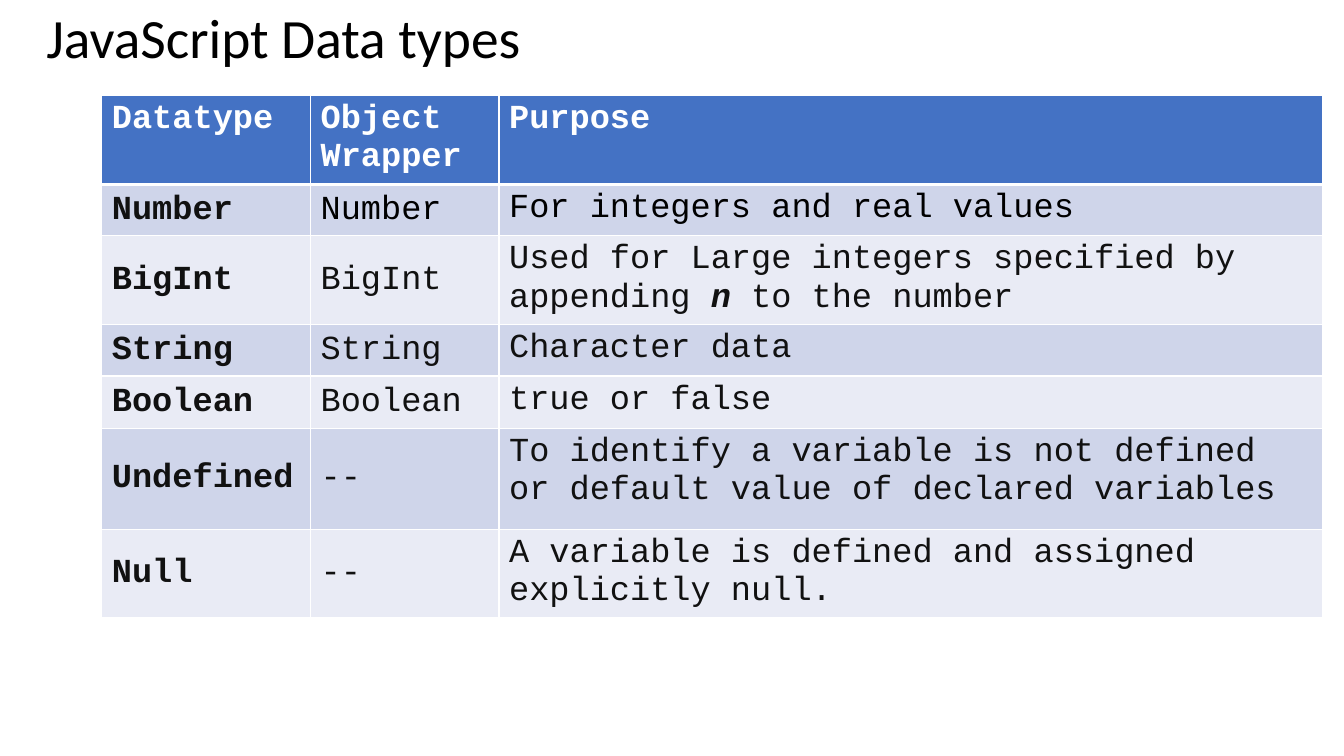
from lxml.etree import SubElement
from pptx import Presentation
from pptx.dml.color import RGBColor
from pptx.enum.text import MSO_ANCHOR, MSO_AUTO_SIZE, PP_ALIGN
from pptx.oxml.ns import qn
from pptx.util import Inches, Pt

HEADINGS = ["Datatype", "Object Wrapper", "Purpose"]
DATATYPES = [
    ("Number", "Number", ["For integers and real values"]),
    ("BigInt", "BigInt", ["Used for Large integers specified by appending ", "n", " to the number"]),
    ("String", "String", ["Character data"]),
    ("Boolean", "Boolean", ["true or false"]),
    ("Undefined", "--", ["To identify a variable is not defined or default value of declared variables"]),
    ("Null", "--", ["A variable is defined and assigned explicitly null."]),
]
COLUMN_WIDTHS = [2.07, 1.87, 8.17]
ROW_HEIGHTS = [0.88, 0.51, 0.88, 0.51, 0.52, 1, 0.88]
BANDS = ["CFD5EA", "E9EBF5"]
WHITE, BLACK, INK, BLUE = "FFFFFF", "000000", "111111", "4472C4"
CODE_FONT = {"name": "Courier New", "size": Pt(24), "bold": False}


def color(hex_value):
    """Return the colour for a hex string."""
    return RGBColor.from_string(hex_value)


def apply_format(target, values):
    """Set each named attribute on the target."""
    for attribute, value in values.items():
        setattr(target, attribute, value)


def write_run(paragraph, words, hex_value, font_format):
    """Append formatted words to a paragraph."""
    run = paragraph.add_run()
    run.text = words
    apply_format(run.font, font_format)
    run.font.color.rgb = color(hex_value)


def draw_borders(cell, widths):
    """Give a cell white borders, with widths in points by side."""
    properties = cell._tc.get_or_add_tcPr()
    for side, width in widths.items():
        border = SubElement(properties, qn(f"a:ln{side}"), w=str(Pt(width)))
        border_fill = SubElement(border, qn("a:solidFill"))
        SubElement(border_fill, qn("a:srgbClr"), val=WHITE)


def fill_cell(cell, parts, ink, background, borders, bold=False, anchor=MSO_ANCHOR.TOP):
    """Write one table cell, stressing every second part of its text."""
    draw_borders(cell, borders)
    cell.fill.solid()
    cell.fill.fore_color.rgb = color(background)
    cell.vertical_anchor = anchor
    for index, words in enumerate(parts):
        stressed = index % 2 == 1
        font_format = CODE_FONT | {"bold": bold or stressed, "italic": stressed}
        write_run(cell.text_frame.paragraphs[0], words, ink, font_format)


def add_title(slide, left, top, width, height):
    """Place the slide title in the given box."""
    title = slide.shapes.title
    apply_format(title, {"left": Inches(left), "top": Inches(top),
                         "width": Inches(width), "height": Inches(height)})
    apply_format(title.text_frame, {"auto_size": MSO_AUTO_SIZE.NONE, "word_wrap": True,
                                    "vertical_anchor": MSO_ANCHOR.MIDDLE})
    heading = title.text_frame.paragraphs[0]
    apply_format(heading, {"alignment": PP_ALIGN.LEFT, "line_spacing": 0.9})
    write_run(heading, "JavaScript Data types", BLACK, {"name": "Calibri", "size": Pt(39.6)})


def add_datatype_table(slide, left, top, width, height):
    """Place the table of data types in the given box."""
    table = slide.shapes.add_table(len(ROW_HEIGHTS), len(COLUMN_WIDTHS), Inches(left),
                                   Inches(top), Inches(width), Inches(height)).table
    for column, share in zip(table.columns, COLUMN_WIDTHS):
        column.width = Inches(width * share / sum(COLUMN_WIDTHS))
    for row, share in zip(table.rows, ROW_HEIGHTS):
        row.height = Inches(height * share / sum(ROW_HEIGHTS))

    thin = {"L": 1, "R": 1, "T": 1, "B": 1}
    for column, heading in enumerate(HEADINGS):
        fill_cell(table.cell(0, column), [heading], WHITE, BLUE, thin | {"B": 3}, bold=True)
    for row, (datatype, wrapper, purpose) in enumerate(DATATYPES, 1):
        borders = thin | {"T": 3 if row == 1 else 1}
        background = BANDS[(row - 1) % 2]
        ink = BLACK if row == 1 else INK
        fill_cell(table.cell(row, 0), [datatype], INK, background, borders, True, MSO_ANCHOR.MIDDLE)
        fill_cell(table.cell(row, 1), [wrapper], ink, background, borders, anchor=MSO_ANCHOR.MIDDLE)
        fill_cell(table.cell(row, 2), purpose, ink, background, borders)


def main():
    """Build and save the slide."""
    deck = Presentation()
    apply_format(deck, {"slide_width": Inches(13.33), "slide_height": Inches(7.5)})
    slide = deck.slides.add_slide(deck.slide_layouts[5])
    add_title(slide, 0.36, 0.12, 11.5, 0.56)
    add_datatype_table(slide, 1.01, 0.95, sum(COLUMN_WIDTHS), sum(ROW_HEIGHTS))
    deck.save("out.pptx")


if __name__ == "__main__":
    main()
